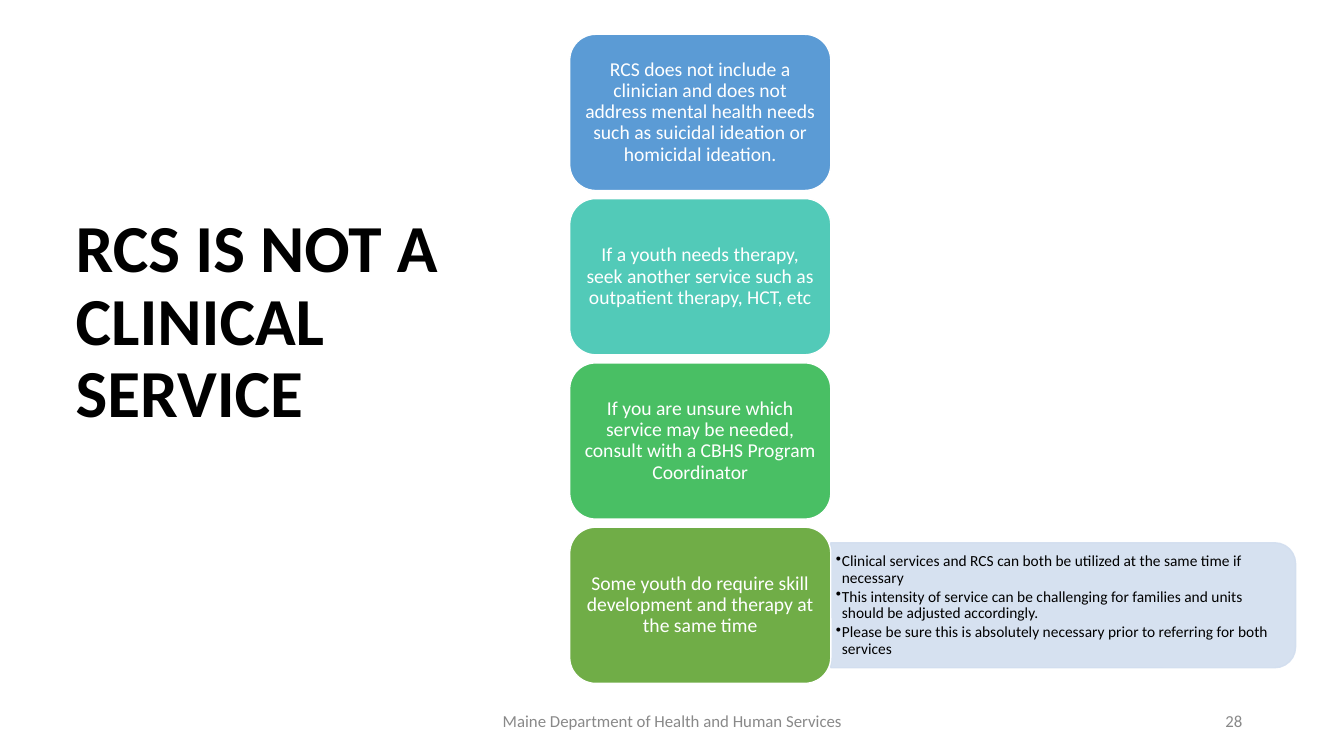
"""Build the slide explaining that RCS is not a clinical service."""
from lxml.etree import SubElement
from pptx import Presentation
from pptx.dml.color import RGBColor
from pptx.enum.shapes import MSO_SHAPE
from pptx.enum.text import MSO_ANCHOR, PP_ALIGN
from pptx.oxml.ns import qn
from pptx.util import Inches, Pt

COLORS = {"blue": "5B9BD5", "teal": "52CAB8", "green": "49BF64", "olive": "70AD47",
          "pale": "D2DEEF", "white": "FFFFFF", "black": "000000", "gray": "898989"}
TITLE = "RCS IS NOT A CLINICAL SERVICE"
CARDS = [
    ("blue", "RCS does not include a clinician and does not address mental health needs "
             "such as suicidal ideation or homicidal ideation."),
    ("teal", "If a youth needs therapy, seek another service such as outpatient therapy, HCT, etc"),
    ("green", "If you are unsure which service may be needed, consult with a CBHS Program Coordinator"),
    ("olive", "Some youth do require skill development and therapy at the same time"),
]
DETAILS = [
    "Clinical services and RCS can both be utilized at the same time if necessary",
    "This intensity of service can be challenging for families and units should be adjusted accordingly.",
    "Please be sure this is absolutely necessary prior to referring for both services",
]
FOOTERS = [
    ("Maine Department of Health and Human Services", 4.42, 4.5, PP_ALIGN.CENTER),
    ("28", 9.42, 3, PP_ALIGN.RIGHT),
]
CARD_LEFT, CARD_TOP, CARD_WIDTH, CARD_HEIGHT, CARD_STEP = 5.65, 0.34, 2.59, 1.55, 1.63
PANEL_WIDTH, PANEL_HEIGHT = 4.61, 1.24


def color(name):
    return RGBColor.from_string(COLORS[name])


def write(shape, *texts, size, ink, bold=False, align=PP_ALIGN.LEFT, line=0.9,
          after=0, insets=(0.1, 0.05, 0.1, 0.05), bullet=False):
    frame = shape.text_frame
    frame.word_wrap = True
    frame.vertical_anchor = MSO_ANCHOR.MIDDLE
    frame.margin_left, frame.margin_top, frame.margin_right, frame.margin_bottom = map(Inches, insets)
    frame.text = "\n".join(texts)
    for paragraph in frame.paragraphs:
        paragraph.alignment = align
        paragraph.line_spacing = line
        paragraph.space_before, paragraph.space_after = Pt(0), Pt(after)
        for run in paragraph.runs:
            font = run.font
            font.name, font.size, font.bold = "Calibri", Pt(size), bold
            font.color.rgb = color(ink)
        if bullet:
            properties = paragraph._p.get_or_add_pPr()
            properties.set("marL", str(Inches(0.06)))
            properties.set("indent", str(-Inches(0.06)))
            SubElement(properties, qn("a:buChar"), char="•")


def add_box(slide, kind, left, top, width, height, fill, outline):
    shape = slide.shapes.add_shape(kind, *map(Inches, (left, top, width, height)))
    shape.shadow.inherit = False
    shape.fill.solid()
    shape.fill.fore_color.rgb = color(fill)
    shape.line.color.rgb = color(outline)
    shape.line.width = Pt(1)
    return shape


def add_panel(slide, left, middle):
    panel = add_box(slide, MSO_SHAPE.ROUND_2_SAME_RECTANGLE,
                    left + (PANEL_WIDTH - PANEL_HEIGHT) / 2, middle - PANEL_WIDTH / 2,
                    PANEL_HEIGHT, PANEL_WIDTH, "pale", "pale")
    panel.rotation = 90
    for paint in panel._element.spPr.iter(qn("a:srgbClr")):
        SubElement(paint, qn("a:alpha"), val="90000")
    text_box = slide.shapes.add_textbox(*map(Inches, (left, middle - 0.56, 4.55, 1.12)))
    write(text_box, *DETAILS, size=11, ink="black", after=1.65,
          insets=(0.05, 0.02, 0.05, 0.02), bullet=True)


presentation = Presentation()
presentation.slide_width, presentation.slide_height = Inches(13.33), Inches(7.5)
slide = presentation.slides.add_slide(presentation.slide_layouts[5])

title = slide.shapes.title
title.left, title.top, title.width, title.height = map(Inches, (0.65, 0.7, 4.16, 5.75))
write(title, TITLE, size=48, ink="black", bold=True, insets=(0.1, 0.05, 0.1, 0.78))

for text, left, width, align in FOOTERS:
    footer = slide.shapes.add_textbox(*map(Inches, (left, 6.95, width, 0.4)))
    write(footer, text, size=12, ink="gray", align=align, line=1, after=6)

last_top = CARD_TOP + CARD_STEP * (len(CARDS) - 1)
add_panel(slide, CARD_LEFT + CARD_WIDTH, last_top + CARD_HEIGHT / 2)
for index, (fill, text) in enumerate(CARDS):
    card = add_box(slide, MSO_SHAPE.ROUNDED_RECTANGLE, CARD_LEFT, CARD_TOP + index * CARD_STEP,
                   CARD_WIDTH, CARD_HEIGHT, fill, "white")
    write(card, text, size=14, ink="white", align=PP_ALIGN.CENTER, insets=(0.06, 0.03, 0.06, 0.03))

presentation.save("out.pptx")
